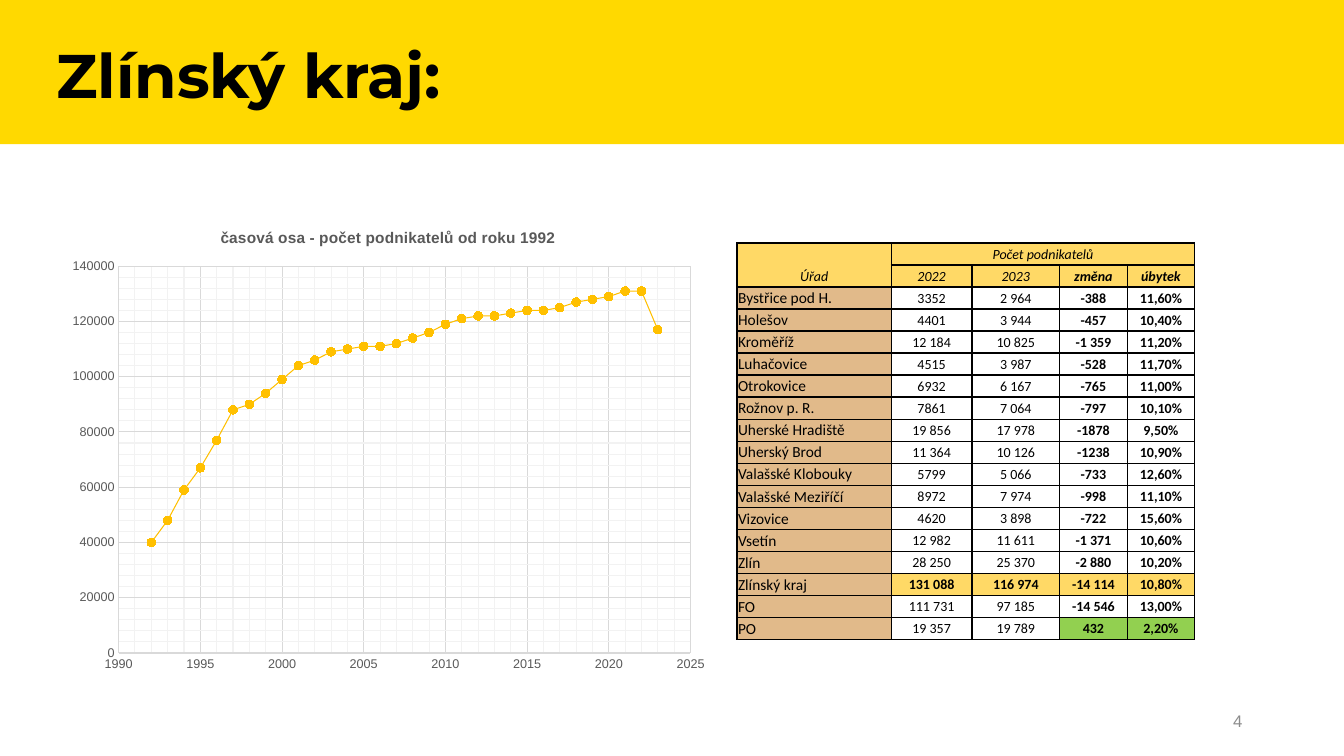
"""Builds the Zlínský kraj slide with a timeline chart and a table of entrepreneurs."""
from copy import deepcopy
from typing import NamedTuple, Optional

from lxml.etree import SubElement
from pptx import Presentation
from pptx.chart.data import XyChartData
from pptx.dml.color import RGBColor
from pptx.enum.chart import XL_CHART_TYPE as ChartType, XL_MARKER_STYLE as Marker, XL_TICK_MARK as Tick
from pptx.enum.shapes import MSO_SHAPE as Preset
from pptx.enum.text import MSO_ANCHOR as Anchor, PP_ALIGN as Align
from pptx.oxml.ns import qn
from pptx.util import Inches, Pt

BLACK = RGBColor(0x00, 0x00, 0x00)
WHITE = RGBColor(0xFF, 0xFF, 0xFF)
YELLOW = RGBColor(0xFF, 0xD9, 0x00)
AMBER = RGBColor(0xFF, 0xC0, 0x00)
HEADER = RGBColor(0xFF, 0xD9, 0x66)
TAN = RGBColor(0xE1, 0xBA, 0x8A)
GREEN = RGBColor(0x92, 0xD0, 0x50)
TEXT_GREY = RGBColor(0x59, 0x59, 0x59)
NUMBER_GREY = RGBColor(0x8C, 0x8C, 0x8C)
GRID = RGBColor(0xD9, 0xD9, 0xD9)
MINOR_GRID = RGBColor(0xF2, 0xF2, 0xF2)

FIRST_YEAR = 1992
COUNTS = [
    40000, 48000, 59000, 67000, 77000, 88000, 90000, 94000,
    99000, 104000, 106000, 109000, 110000, 111000, 111000, 112000,
    114000, 116000, 119000, 121000, 122000, 122000, 123000, 124000,
    124000, 125000, 127000, 128000, 129000, 131000, 131000, 117000,
]
PLOT_LAYOUT = {"x": 0.09, "y": 0.12, "w": 0.87, "h": 0.82}
COLUMN_WIDTHS = [1.53, 0.8, 0.87, 0.67, 0.67]
TABLE_HEIGHT = 3.94


class Row(NamedTuple):
    office: str
    before: str
    after: str
    change: str
    loss: str
    fill: Optional[RGBColor] = None
    change_fill: Optional[RGBColor] = None
    bold: bool = False


class Label(NamedTuple):
    text: str
    left: float
    top: float
    width: float
    height: float
    font: str
    size: int
    color: RGBColor
    bold: bool
    align: Align
    anchor: Anchor
    spacing: float


HEADERS = [
    Row("", "Počet podnikatelů", "", "", "", HEADER, HEADER),
    Row("Úřad", "2022", "2023", "změna", "úbytek", HEADER, HEADER),
]
OFFICES = [
    Row("Bystřice pod H.", "3352", "2 964", "-388", "11,60%"),
    Row("Holešov", "4401", "3 944", "-457", "10,40%"),
    Row("Kroměříž", "12 184", "10 825", "-1 359", "11,20%"),
    Row("Luhačovice", "4515", "3 987", "-528", "11,70%"),
    Row("Otrokovice", "6932", "6 167", "-765", "11,00%"),
    Row("Rožnov p. R.", "7861", "7 064", "-797", "10,10%"),
    Row("Uherské Hradiště", "19 856", "17 978", "-1878", "9,50%"),
    Row("Uherský Brod", "11 364", "10 126", "-1238", "10,90%"),
    Row("Valašské Klobouky", "5799", "5 066", "-733", "12,60%"),
    Row("Valašské Meziříčí", "8972", "7 974", "-998", "11,10%"),
    Row("Vizovice", "4620", "3 898", "-722", "15,60%"),
    Row("Vsetín", "12 982", "11 611", "-1 371", "10,60%"),
    Row("Zlín", "28 250", "25 370", "-2 880", "10,20%"),
    Row("Zlínský kraj", "131 088", "116 974", "-14 114", "10,80%", HEADER, HEADER, True),
    Row("FO", "111 731", "97 185", "-14 546", "13,00%", WHITE, WHITE),
    Row("PO", "19 357", "19 789", "432", "2,20%", WHITE, GREEN),
]
LABELS = [
    Label("4", 9.42, 6.95, 3, 0.4, "Arial", 12, NUMBER_GREY, False, Align.RIGHT, Anchor.MIDDLE, 1.0),
    Label("Zlínský kraj:", 0.46, 0.4, 12.32, 1.02, "Montserrat", 44, BLACK, True, Align.LEFT, Anchor.TOP, 0.9),
]


def style_font(font, name: str, size: float, color: RGBColor, bold: bool = False, italic: bool = False) -> None:
    font.name, font.size, font.bold, font.italic = name, Pt(size), bold, italic
    font.color.rgb = color


def add_label(slide, label: Label) -> None:
    box = slide.shapes.add_textbox(*map(Inches, (label.left, label.top, label.width, label.height)))
    frame = box.text_frame
    frame.word_wrap = True
    frame.vertical_anchor = label.anchor
    paragraph = frame.paragraphs[0]
    paragraph.text = label.text
    paragraph.alignment = label.align
    paragraph.line_spacing = label.spacing
    style_font(paragraph.font, label.font, label.size, label.color, label.bold)


def style_axis(axis, low: int, high: int, major: int, minor: int) -> None:
    axis.minimum_scale, axis.maximum_scale = low, high
    axis.major_unit, axis.minor_unit = major, minor
    axis.major_tick_mark = axis.minor_tick_mark = Tick.NONE
    axis.has_major_gridlines = axis.has_minor_gridlines = True
    line = axis.major_gridlines.format.line
    line.color.rgb, line.width = GRID, Pt(0.75)
    style_font(axis.tick_labels.font, "Arial", 9, TEXT_GREY)
    axis.tick_labels.number_format = "General"
    axis.tick_labels.number_format_is_linked = False


def add_timeline(slide) -> None:
    data = XyChartData()
    points = data.add_series("Series 1")
    for year, count in enumerate(COUNTS, FIRST_YEAR):
        points.add_data_point(year, count)
    chart = slide.shapes.add_chart(
        ChartType.XY_SCATTER_LINES, *map(Inches, (0.59, 2.08, 6.52, 4.68)), data).chart
    style_font(chart.font, "Arial", 10, BLACK)
    chart.has_legend = False
    chart.has_title = True
    title = chart.chart_title.text_frame.paragraphs[0]
    title.text = "časová osa - počet podnikatelů od roku 1992"
    style_font(title.font, "Arial", 11, TEXT_GREY, True)

    style_axis(chart.category_axis, 1990, 2025, 5, 1)
    style_axis(chart.value_axis, 0, 140000, 20000, 4000)
    axis_line = chart.category_axis.format.line
    axis_line.color.rgb, axis_line.width = GRID, Pt(1)
    chart.value_axis.format.line.fill.background()

    chart.plots[0].vary_by_categories = False
    series = chart.plots[0].series[0]
    series.smooth = False
    series.format.line.color.rgb, series.format.line.width = AMBER, Pt(0.75)
    series.marker.style, series.marker.size = Marker.CIRCLE, 6
    series.marker.format.fill.solid()
    series.marker.format.fill.fore_color.rgb = AMBER
    series.marker.format.line.color.rgb = AMBER

    chart_space = chart._chartSpace
    for minor in chart_space.iter(qn("c:minorGridlines")):
        properties = deepcopy(minor.getprevious().find(qn("c:spPr")))
        next(properties.iter(qn("a:srgbClr"))).set("val", str(MINOR_GRID))
        minor.append(properties)
    plot_area = next(chart_space.iter(qn("c:plotArea")))
    for old_layout in plot_area.findall(qn("c:layout")):
        plot_area.remove(old_layout)
    layout = plot_area.makeelement(qn("c:layout"))
    plot_area.insert(0, layout)
    manual = SubElement(layout, qn("c:manualLayout"))
    settings = {"layoutTarget": "inner", "xMode": "edge", "yMode": "edge", **PLOT_LAYOUT}
    for name, value in settings.items():
        SubElement(manual, qn(f"c:{name}")).set("val", str(value))


def set_borders(cell, open_side: str) -> None:
    properties = cell._tc.get_or_add_tcPr()
    for side in "LRTB":
        line = SubElement(properties, qn(f"a:ln{side}"), w=str(Pt(1)))
        if side == open_side:
            SubElement(line, qn("a:noFill"))
        else:
            SubElement(SubElement(line, qn("a:solidFill")), qn("a:srgbClr"), val=str(BLACK))


def fill_cell(cell, text: str, fill: Optional[RGBColor], size: int, bold: bool, italic: bool,
              align: Align, open_side: str) -> None:
    set_borders(cell, open_side)
    if fill is None:
        cell.fill.background()
    else:
        cell.fill.solid()
        cell.fill.fore_color.rgb = fill
    cell.vertical_anchor = Anchor.MIDDLE
    cell.margin_left = cell.margin_right = cell.margin_top = Inches(0.01)
    cell.margin_bottom = 0
    paragraph = cell.text_frame.paragraphs[0]
    paragraph.alignment = align
    style_font(paragraph.font, "Calibri", size, BLACK, bold, italic)
    if text:
        paragraph.text = text
    else:
        paragraph._p.get_or_add_endParaRPr().set("sz", str(size * 100))


def add_office_table(slide) -> None:
    rows = HEADERS + OFFICES
    table = slide.shapes.add_table(
        len(rows), len(COLUMN_WIDTHS),
        *map(Inches, (7.31, 2.41, sum(COLUMN_WIDTHS), TABLE_HEIGHT))).table
    table.first_row = table.horz_banding = False
    for column, width in zip(table.columns, COLUMN_WIDTHS):
        column.width = Inches(width)
    for row_index, row in enumerate(rows):
        table.rows[row_index].height = Inches(TABLE_HEIGHT / len(rows))
        header = row_index < len(HEADERS)
        for column_index, text in enumerate(row[:5]):
            is_office = column_index == 0 and not header
            is_change = column_index >= 3
            fill = TAN if is_office else row.change_fill if is_change else row.fill
            bold = not is_office and (row.bold or is_change)
            open_side = "BT"[row_index] if header and column_index == 0 else ""
            fill_cell(table.cell(row_index, column_index), text, fill, 11 if is_office else 10,
                      bold, header, Align.LEFT if is_office else Align.CENTER, open_side)
    table.cell(0, 1).merge(table.cell(0, 4))


def main() -> None:
    presentation = Presentation()
    presentation.slide_width, presentation.slide_height = Inches(13.33), Inches(7.5)
    slide = presentation.slides.add_slide(presentation.slide_layouts[6])
    band = slide.shapes.add_shape(Preset.RECTANGLE, 0, 0, Inches(13.33), Inches(1.43))
    band.shadow.inherit = False
    band.fill.solid()
    band.fill.fore_color.rgb = YELLOW
    band.line.fill.background()
    add_timeline(slide)
    for label in LABELS:
        add_label(slide, label)
    add_office_table(slide)
    presentation.save("out.pptx")


if __name__ == "__main__":
    main()
